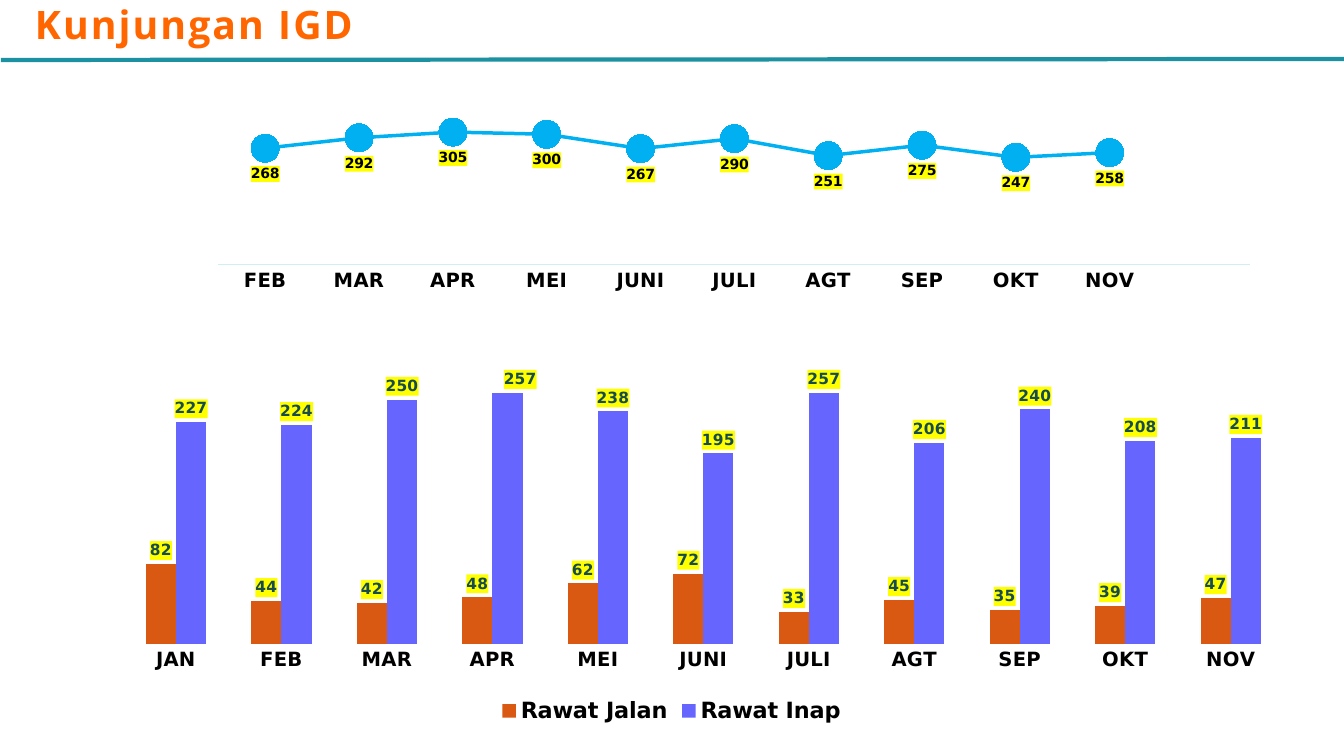
"""Build the emergency visits slide with its line and column charts."""
import lxml.etree
import pptx
import pptx.chart.data
import pptx.dml.color
import pptx.enum.chart
import pptx.enum.shapes
import pptx.enum.text
import pptx.oxml
import pptx.oxml.ns
import pptx.util

PX = 914400 / 100.8
COLORS = {
    "title": "FF6600", "rule": "1B91A1", "text": "000000", "label": "164B4F",
    "highlight": "FFFF00", "outpatient": "DA5912", "inpatient": "6666FF",
    "visits": "00B0F0", "axis": "CFEFF2",
}
CHART_FONT = "DejaVu Sans"
TITLE = "Kunjungan IGD"
TITLE_BOX = (16, -5, 356, 57)
RULE = (1, 60, 1344, 59)
MONTHS = ["JAN", "FEB", "MAR", "APR", "MEI", "JUNI", "JULI", "AGT", "SEP", "OKT", "NOV"]
COLUMN_CHART = {
    "kind": pptx.enum.chart.XL_CHART_TYPE.COLUMN_CLUSTERED,
    "box": (34, 347, 1275, 381),
    "plot_area": (0.07, 0.01, 0.91, 0.77),
    "months": MONTHS,
    "series": {
        "Rawat Jalan": [82, 44, 42, 48, 62, 72, 33, 45, 35, 39, 47],
        "Rawat Inap": [227, 224, 250, 257, 238, 195, 257, 206, 240, 208, 211],
    },
    "maximum": 300,
}
LINE_CHART = {
    "kind": pptx.enum.chart.XL_CHART_TYPE.LINE_MARKERS,
    "box": (101, 101, 1173, 231),
    "plot_area": (0.1, 0.05, 0.88, 0.66),
    "months": MONTHS[1:] + [""],
    "series": {"Series 1": [268, 292, 305, 300, 267, 290, 251, 275, 247, 258, None]},
    "maximum": 350,
}
APRIL = 3
APRIL_LABEL_SHIFT = 0.01


def px(*lengths):
    return [pptx.util.Emu(round(length * PX)) for length in lengths]


def rgb(name):
    return pptx.dml.color.RGBColor.from_string(COLORS[name])


def set_font(font, size, color="text", name=CHART_FONT):
    font.size = pptx.util.Pt(size)
    font.bold = True
    font.name = name
    font.color.rgb = rgb(color)


def write_text(text_frame, text, *, size, color, name, spacing, align):
    paragraph = text_frame.paragraphs[0]
    paragraph.alignment = align
    run = paragraph.add_run()
    run.text = text
    set_font(run.font, size, color, name)
    run.font._element.set("spc", str(spacing))


def manual_layout(**values):
    namespace = pptx.oxml.ns.nsdecls("c")
    parts = "".join(f'<c:{tag} val="{value}"/>' for tag, value in values.items())
    return pptx.oxml.parse_xml(
        f"<c:layout {namespace}><c:manualLayout>{parts}</c:manualLayout></c:layout>")


def add_chart(slide, kind, box, plot_area, months, series, maximum):
    data = pptx.chart.data.CategoryChartData(number_format="#,##0")
    data.categories = months
    for name, values in series.items():
        data.add_series(name, values)
    chart = slide.shapes.add_chart(kind, *px(*box), data).chart
    chart.has_title = False
    chart.has_legend = False
    chart.font.size = pptx.util.Pt(10)
    chart.font.name = "Arial"
    chart.plots[0].vary_by_categories = False
    chart.value_axis.visible = False
    chart.value_axis.has_major_gridlines = False
    chart.value_axis.minimum_scale = 0
    chart.value_axis.maximum_scale = maximum
    chart.category_axis.major_tick_mark = pptx.enum.chart.XL_TICK_MARK.NONE
    set_font(chart.category_axis.tick_labels.font, 14)
    area = chart._chartSpace.find(".//" + pptx.oxml.ns.qn("c:plotArea"))
    for layout in area.findall(pptx.oxml.ns.qn("c:layout")):
        area.remove(layout)
    left, top, width, height = plot_area
    area.insert(0, manual_layout(layoutTarget="inner", xMode="edge", yMode="edge",
                                 x=left, y=top, w=width, h=height))
    return chart


def label_values(series, position, size, color):
    labels = series.data_labels
    labels.show_value = True
    labels.position = position
    labels.number_format = "#,##0"
    labels.number_format_is_linked = False
    set_font(labels.font, size, color)


def highlight_labels(series):
    for text_properties in list(series._element.iter(pptx.oxml.ns.qn("c:txPr"))):
        text_properties.addprevious(pptx.oxml.parse_xml(
            f'<c:spPr {pptx.oxml.ns.nsdecls("c", "a")}><a:solidFill>'
            f'<a:srgbClr val="{COLORS["highlight"]}"/></a:solidFill></c:spPr>'))


def add_column_chart(slide):
    chart = add_chart(slide, **COLUMN_CHART)
    chart.plots[0].gap_width = 150
    chart.plots[0].overlap = 0
    chart.category_axis.format.line.fill.background()
    chart.has_legend = True
    chart.legend.position = pptx.enum.chart.XL_LEGEND_POSITION.BOTTOM
    chart.legend.include_in_layout = False
    set_font(chart.legend.font, 16)
    outside = pptx.enum.chart.XL_LABEL_POSITION.OUTSIDE_END
    outpatient, inpatient = chart.plots[0].series
    for series, color in ((outpatient, "outpatient"), (inpatient, "inpatient")):
        series.format.fill.solid()
        series.format.fill.fore_color.rgb = rgb(color)
        label_values(series, outside, 11, "label")
    april_label = inpatient.points[APRIL].data_label
    april_label.position = outside
    set_font(april_label.font, 11, "label")
    april_index = inpatient._element.find(
        f'.//{pptx.oxml.ns.qn("c:dLbl")}/{pptx.oxml.ns.qn("c:idx")}')
    april_index.addnext(manual_layout(x=APRIL_LABEL_SHIFT, y=0))
    for series in (outpatient, inpatient):
        highlight_labels(series)


def add_line_chart(slide):
    chart = add_chart(slide, **LINE_CHART)
    chart.font.name = "Arial Narrow"
    axis_line = chart.category_axis.format.line
    axis_line.color.rgb = rgb("axis")
    axis_line.width = pptx.util.Pt(0.84)
    visits = chart.plots[0].series[0]
    visits.smooth = False
    visits.format.line.color.rgb = rgb("visits")
    visits.format.line.width = pptx.util.Pt(2.5)
    marker = visits.marker
    marker.style = pptx.enum.chart.XL_MARKER_STYLE.CIRCLE
    marker.size = 20
    marker.format.fill.solid()
    marker.format.fill.fore_color.rgb = rgb("visits")
    marker.format.line.fill.background()
    label_values(visits, pptx.enum.chart.XL_LABEL_POSITION.BELOW, 10, "text")
    highlight_labels(visits)


def add_rule(slide):
    rule = slide.shapes.add_connector(pptx.enum.shapes.MSO_CONNECTOR.STRAIGHT, *px(*RULE))
    rule.line.color.rgb = rgb("rule")
    rule.line.width = pptx.util.Pt(3)
    lxml.etree.SubElement(rule._element.spPr, pptx.oxml.ns.qn("a:effectLst"))


def add_title(slide):
    title = slide.shapes.title
    title.left, title.top, title.width, title.height = px(*TITLE_BOX)
    frame = title.text_frame
    frame.word_wrap = False
    frame.auto_size = pptx.enum.text.MSO_AUTO_SIZE.NONE
    frame.vertical_anchor = pptx.enum.text.MSO_ANCHOR.MIDDLE
    write_text(frame, TITLE, size=28, color="title", name="Open Sans", spacing=150,
               align=pptx.enum.text.PP_ALIGN.CENTER)


def main():
    presentation = pptx.Presentation()
    presentation.slide_width, presentation.slide_height = px(1344, 756)
    slide = presentation.slides.add_slide(presentation.slide_layouts[5])
    add_rule(slide)
    add_title(slide)
    add_column_chart(slide)
    add_line_chart(slide)
    presentation.save("out.pptx")


if __name__ == "__main__":
    main()
